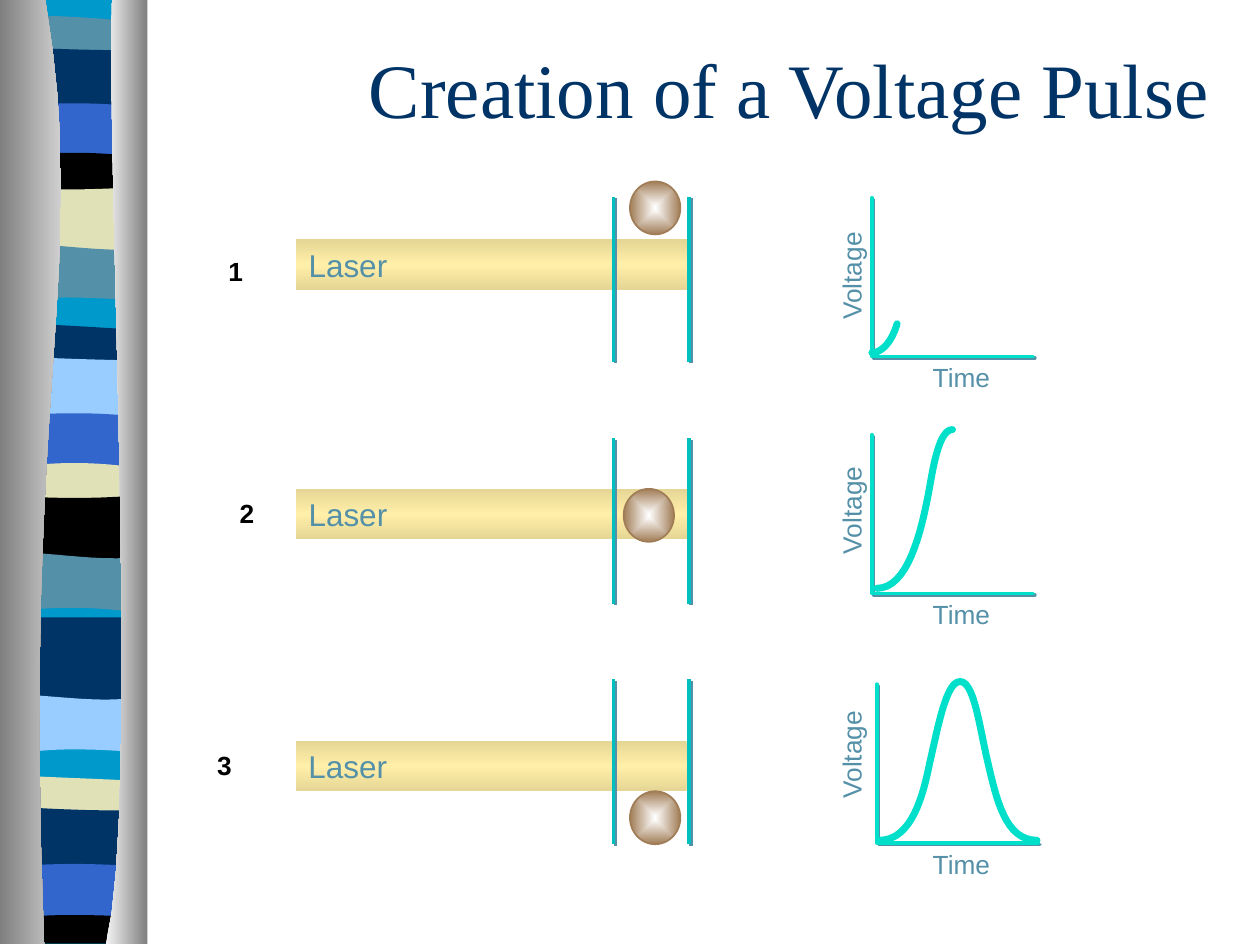
from dataclasses import dataclass

from lxml import etree
from pptx import Presentation
from pptx.dml.color import RGBColor
from pptx.enum.shapes import MSO_CONNECTOR, MSO_SHAPE
from pptx.enum.text import MSO_ANCHOR, PP_ALIGN
from pptx.oxml.ns import qn
from pptx.util import Inches, Pt

STRAIGHT = MSO_CONNECTOR.STRAIGHT
RECTANGLE, OVAL = MSO_SHAPE.RECTANGLE, MSO_SHAPE.OVAL
LEFT, CENTER = PP_ALIGN.LEFT, PP_ALIGN.CENTER
TOP, MIDDLE = MSO_ANCHOR.TOP, MSO_ANCHOR.MIDDLE

NAVY, TEAL, CYAN = "003366", "5490A8", "0099CC"
BLUE, SKY, CREAM, BLACK = "3366CC", "99CCFF", "E1E1B7", "000000"
PLATE, TRACE, BROWN = "00BFBF", "00DFCA", "A17D57"

BANDS = [
    (TEAL, (0.12, 0.12, 0.14, 0.18)),
    (NAVY, (0.37, 0.39, 0.4, 0.4)),
    (BLUE, (0.85, 0.81, 0.81, 0.85)),
    (BLACK, (1.25, 1.2, 1.2, 1.25)),
    (CREAM, (1.49, 1.51, 1.51, 1.48)),
    (TEAL, (1.93, 1.93, 2, 1.98)),
    (CYAN, (2.38, 2.35, 2.36, 2.39)),
    (NAVY, (2.57, 2.57, 2.6, 2.62)),
    (SKY, (2.83, 2.84, 2.86, 2.86)),
    (BLUE, (3.31, 3.27, 3.27, 3.31)),
    (CREAM, (3.72, 3.66, 3.66, 3.72)),
    (BLACK, (3.93, 3.96, 3.96, 3.93)),
    (TEAL, (4.38, 4.38, 4.46, 4.42)),
    (CYAN, (4.86, 4.81, 4.81, 4.87)),
    (NAVY, (4.9, 4.9, 4.9, 4.9)),
    (SKY, (5.51, 5.51, 5.59, 5.53)),
    (CYAN, (6, 5.92, 5.95, 5.97)),
    (CREAM, (6.15, 6.17, 6.18, 6.2)),
    (NAVY, (6.4, 6.42, 6.44, 6.43)),
    (BLUE, (6.88, 6.85, 6.85, 6.88)),
    (BLACK, (7.29, 7.25, 7.26, 7.28)),
]


@dataclass
class Stage:
    number: str
    number_at: tuple
    beam_top: float
    beam_width: float
    plate_top: float
    ball_at: tuple
    plot_at: tuple
    voltage_top: float
    pulse: list


STAGES = [
    Stage("1", (1.71, 1.98), 1.9, 3.12, 1.56, (5, 1.44), (6.92, 1.57), 2.02,
          [(0, 1.23), (0.08, 1.23), (0.16, 1.14), (0.2, 1)]),
    Stage("2", (1.8, 3.9), 3.88, 3.12, 3.48, (4.95, 3.88), (6.92, 3.45), 3.88,
          [(0.04, 1.22), (0.28, 1.22), (0.39, 0.8), (0.46, 0.41),
           (0.5, 0.17), (0.55, -0.04), (0.64, -0.04)]),
    Stage("3", (1.62, 5.9), 5.88, 3.1, 5.39, (5, 6.28), (6.96, 5.43), 5.82,
          [(0.02, 1.24), (0.28, 1.24), (0.37, 0.87), (0.42, 0.62),
           (0.49, 0.32), (0.55, -0.02), (0.66, -0.02),
           (0.77, -0.02), (0.81, 0.32), (0.88, 0.62),
           (0.95, 0.92), (1.02, 1.24), (1.27, 1.24)]),
]


def color(value):
    return RGBColor.from_string(value)


def curve(knots, steps=16):
    points = [knots[0]]
    for start in range(0, len(knots) - 1, 3):
        segment = knots[start:start + 4]
        for step in range(1, steps + 1):
            t = step / steps
            weights = ((1 - t) ** 3, 3 * t * (1 - t) ** 2, 3 * t * t * (1 - t), t ** 3)
            points.append(tuple(sum(w * knot[axis] for w, knot in zip(weights, segment))
                                for axis in (0, 1)))
    return points


def add_path(page, points, close):
    corners = [(Inches(x), Inches(y)) for x, y in points]
    builder = page.shapes.build_freeform(*corners[0])
    builder.add_line_segments(corners[1:], close=close)
    shape = builder.convert_to_shape()
    shape.shadow.inherit = False
    return shape


def add_area(page, points, fill=None):
    shape = add_path(page, points, True)
    shape.line.fill.background()
    if fill:
        shape.fill.solid()
        shape.fill.fore_color.rgb = color(fill)
    return shape


def add_trace(page, points, width):
    shape = add_path(page, points, False)
    shape.fill.background()
    shape.line.color.rgb = color(TRACE)
    shape.line.width = Pt(width)
    shape.line._get_or_add_ln().set("cap", "rnd")
    return shape


def set_gradient(shape, stops, angle=None):
    shape.fill.gradient()
    gradient = shape._element.spPr.find(qn("a:gradFill"))
    for child in list(gradient):
        gradient.remove(child)
    stop_list = etree.SubElement(gradient, qn("a:gsLst"))
    for position, value in stops:
        stop = etree.SubElement(stop_list, qn("a:gs"), pos=str(position * 1000))
        etree.SubElement(stop, qn("a:srgbClr"), val=value)
    if angle is None:
        center = etree.SubElement(gradient, qn("a:path"), path="shape")
        etree.SubElement(center, qn("a:fillToRect"),
                         **{side: "50000" for side in "ltrb"})
    else:
        etree.SubElement(gradient, qn("a:lin"), ang=str(angle * 60000), scaled="0")


def set_shadow(shape):
    properties = shape._element.spPr
    effects = properties.find(qn("a:effectLst"))
    if effects is None:
        effects = etree.SubElement(properties, qn("a:effectLst"))
    shadow = etree.SubElement(effects, qn("a:outerShdw"), dist=str(Pt(1.4)),
                              dir="2700000", algn="ctr", rotWithShape="0")
    etree.SubElement(shadow, qn("a:srgbClr"), val=TEAL)


def write(shape, text, size, value, font="Arial", bold=False, align=CENTER,
          anchor=TOP, wrap=False, insets=(0.1, 0.05)):
    frame = shape.text_frame
    frame.word_wrap = wrap
    frame.vertical_anchor = anchor
    frame.margin_left = frame.margin_right = Inches(insets[0])
    frame.margin_top = frame.margin_bottom = Inches(insets[1])
    para = frame.paragraphs[0]
    para.alignment = align
    span = para.add_run()
    span.text = text
    span.font.name = font
    span.font.size = Pt(size)
    span.font.bold = bold
    span.font.color.rgb = color(value)


def add_text(page, box, text, size, value, **style):
    shape = page.shapes.add_textbox(*map(Inches, box))
    write(shape, text, size, value, **style)
    return shape


def add_preset(page, kind, box):
    shape = page.shapes.add_shape(kind, *map(Inches, box))
    shape.shadow.inherit = False
    return shape


def draw_ribbon(page, left, right, bottom):
    add_area(page, [(left, 0), (right, 0), (right, bottom), (left, bottom)], CYAN)
    handles = [left + (right - left) * third / 3 for third in range(4)]
    floor = (CYAN, (bottom,) * 4)
    for (fill, wave), (below, next_wave) in zip(BANDS, BANDS[1:] + [floor]):
        if fill == CYAN:
            continue
        overlap = 0 if below == CYAN else 0.05
        upper = curve(list(zip(handles, wave)))
        lower = curve([(x, y + overlap) for x, y in zip(handles, next_wave)])
        add_area(page, upper + lower[::-1], fill)
    left_edge = curve([(0.36, 0), (0.72, 2.16), (0.17, 2.96), (0.35, bottom)])
    left_column = add_area(page, left_edge + [(0, bottom), (0, 0)])
    set_gradient(left_column, [(0, "7F7F7F"), (100, "D0D0D0")], 0)
    right_edge = curve([(0.89, 0), (0.84, 1.25), (1.12, 6.46), (0.84, bottom)])
    right_column = add_area(page, right_edge + [(1.17, bottom), (1.17, 0)])
    set_gradient(right_column, [(0, "F4F4F4"), (100, "7F7F7F")], 0)


def draw_chamber(page, stage):
    beam = add_preset(page, RECTANGLE, (2.35, stage.beam_top, stage.beam_width, 0.4))
    set_gradient(beam, [(0, "E6D696"), (50, "FFEFA9"), (100, "E6D696")], 90)
    beam.line.fill.background()
    write(beam, "Laser", 18, TEAL, align=LEFT, wrap=True)
    for x in (4.87, 5.47):
        plate = page.shapes.add_connector(
            STRAIGHT, Inches(x), Inches(stage.plate_top),
            Inches(x), Inches(stage.plate_top + 1.31))
        plate.line.color.rgb = color(PLATE)
        plate.line.width = Pt(2)
        set_shadow(plate)
    ball = add_preset(page, OVAL, (*stage.ball_at, 0.4, 0.42))
    set_gradient(ball, [(0, "FFFFFF"), (100, BROWN)])
    ball.line.color.rgb = color(BROWN)
    ball.line.width = Pt(1)


def draw_plot(page, stage):
    left, top = stage.plot_at
    axes = add_trace(page, [(left, top), (left, top + 1.26), (left + 1.28, top + 1.26)], 2)
    set_shadow(axes)
    label = {"size": 15, "value": TEAL, "insets": (0.09, 0.04)}
    add_text(page, (7.29, top + 1.26, 0.68, 0.34), "Time", **label)
    voltage = add_text(page, (6.32, stage.voltage_top, 0.88, 0.34), "Voltage", **label)
    voltage.rotation = 270
    add_trace(page, curve([(left + x, top + y) for x, y in stage.pulse]), 4)


def main():
    deck = Presentation()
    deck.slide_width, deck.slide_height = Inches(10), Inches(7.5)
    page = deck.slides.add_slide(deck.slide_layouts[6])
    draw_ribbon(page, 0.05, 1.13, 7.49)
    add_text(page, (2.83, 0.28, 7.09, 0.84), "Creation of a Voltage Pulse", 44, NAVY,
             font="Times New Roman", align=LEFT, anchor=MIDDLE, wrap=True)
    for stage in STAGES:
        draw_chamber(page, stage)
        draw_plot(page, stage)
        add_text(page, (*stage.number_at, 0.32, 0.35), stage.number, 15, BLACK, bold=True)
    deck.save("out.pptx")


if __name__ == "__main__":
    main()
